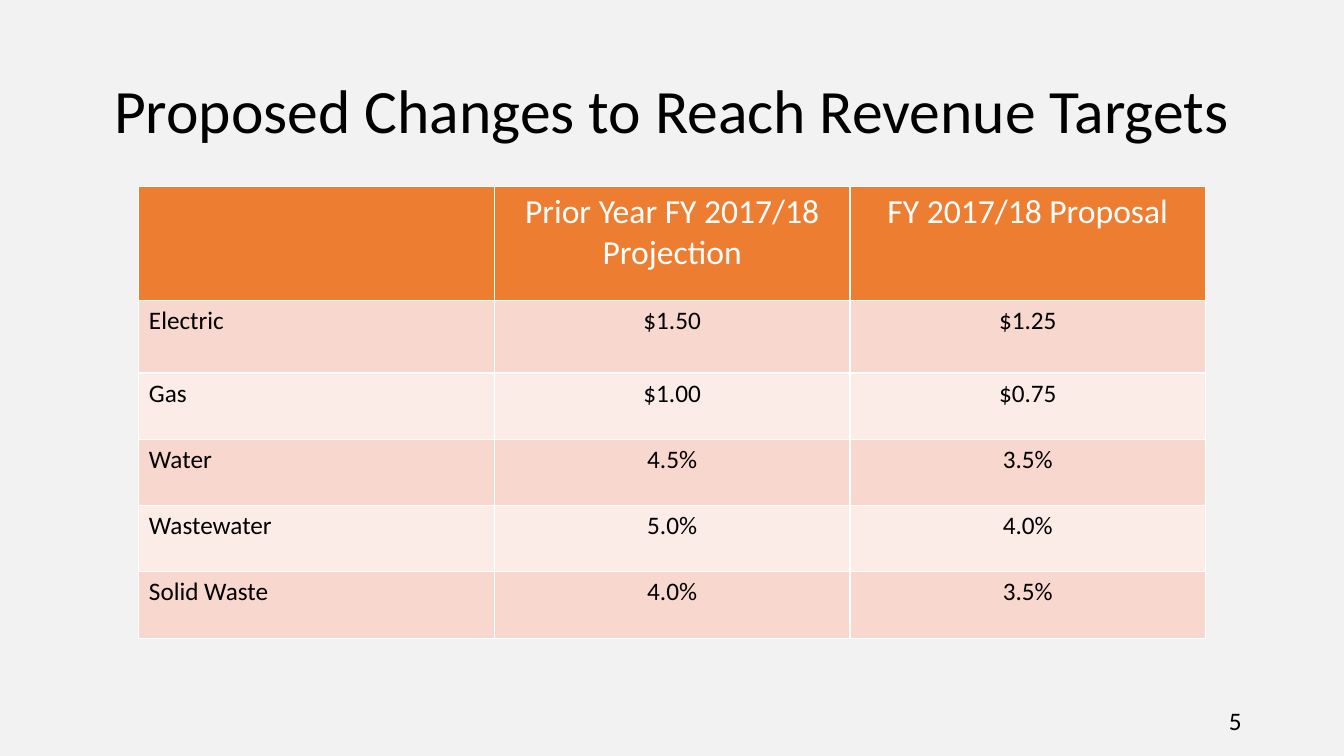
import pptx
import pptx.dml.color
import pptx.enum.text
import pptx.oxml.ns
import pptx.util
from lxml import etree

Cm = pptx.util.Cm
Pt = pptx.util.Pt
RGBColor = pptx.dml.color.RGBColor
ALIGN = pptx.enum.text.PP_ALIGN
ANCHOR = pptx.enum.text.MSO_ANCHOR

BACKGROUND = RGBColor(0xF2, 0xF2, 0xF2)
BLACK = RGBColor(0x00, 0x00, 0x00)
WHITE = RGBColor(0xFF, 0xFF, 0xFF)
ORANGE = RGBColor(0xED, 0x7D, 0x31)
BANDS = (RGBColor(0xF8, 0xD7, 0xCE), RGBColor(0xFC, 0xEC, 0xE8))

RATE_ROWS = [
    ("", "Prior Year FY 2017/18 Projection", "FY 2017/18 Proposal"),
    ("Electric", "$1.50", "$1.25"),
    ("Gas", "$1.00", "$0.75"),
    ("Water", "4.5%", "3.5%"),
    ("Wastewater", "5.0%", "4.0%"),
    ("Solid Waste", "4.0%", "3.5%"),
]
ROW_HEIGHTS = [2.88, 1.82] + [1.67] * 4
COLUMN_WIDTH = 8.96


def apply_formats(target, formats):
    for name, value in formats.items():
        setattr(target, name, value)


class SlideBuilder:
    font_name = "Calibri"

    def __init__(self, slide):
        self.slide = slide
        slide.background.fill.solid()
        slide.background.fill.fore_color.rgb = BACKGROUND

    def fill_paragraph(self, paragraph, text, size, color, formats):
        apply_formats(paragraph, formats)
        run = paragraph.add_run()
        run.text = text
        apply_formats(run.font, {"name": self.font_name, "size": Pt(size), "bold": False})
        run.font.color.rgb = color

    def text(self, text, left, top, width, height, size, **formats):
        box = self.slide.shapes.add_textbox(Cm(left), Cm(top), Cm(width), Cm(height))
        frame = box.text_frame
        apply_formats(frame, {"word_wrap": True, "vertical_anchor": ANCHOR.MIDDLE})
        self.fill_paragraph(frame.paragraphs[0], text, size, BLACK, formats)

    def borders(self, cell):
        properties = cell._tc.get_or_add_tcPr()
        for index, side in enumerate(("a:lnL", "a:lnR", "a:lnT", "a:lnB")):
            line = etree.Element(pptx.oxml.ns.qn(side), w=str(int(Pt(1))))
            fill = etree.SubElement(line, pptx.oxml.ns.qn("a:solidFill"))
            etree.SubElement(fill, pptx.oxml.ns.qn("a:srgbClr"), val=str(WHITE))
            properties.insert(index, line)

    def table(self, rows, left, top, column_width, row_heights):
        columns = len(rows[0])
        table = self.slide.shapes.add_table(
            len(rows), columns, Cm(left), Cm(top),
            Cm(column_width * columns), Cm(sum(row_heights)),
        ).table
        for column in table.columns:
            column.width = Cm(column_width)
        for row_index, values in enumerate(rows):
            table.rows[row_index].height = Cm(row_heights[row_index])
            header = row_index == 0
            for column_index, value in enumerate(values):
                cell = table.cell(row_index, column_index)
                cell.fill.solid()
                cell.fill.fore_color.rgb = ORANGE if header else BANDS[(row_index - 1) % 2]
                self.borders(cell)
                if value:
                    alignment = ALIGN.CENTER if column_index else ALIGN.LEFT
                    self.fill_paragraph(
                        cell.text_frame.paragraphs[0], value,
                        24 if header else 18, WHITE if header else BLACK,
                        {"alignment": alignment},
                    )


def main():
    presentation = pptx.Presentation()
    apply_formats(presentation, {"slide_width": Cm(33.87), "slide_height": Cm(19.05)})
    builder = SlideBuilder(presentation.slides.add_slide(presentation.slide_layouts[6]))
    builder.text(
        "Proposed Changes to Reach Revenue Targets", 2.33, 1.01, 29.21, 3.68, 44,
        alignment=ALIGN.CENTER, line_spacing=0.9,
    )
    builder.text("5", 23.92, 17.66, 7.62, 1.01, 18, alignment=ALIGN.RIGHT)
    builder.table(RATE_ROWS, 3.5, 4.7, COLUMN_WIDTH, ROW_HEIGHTS)
    presentation.save("out.pptx")


if __name__ == "__main__":
    main()
